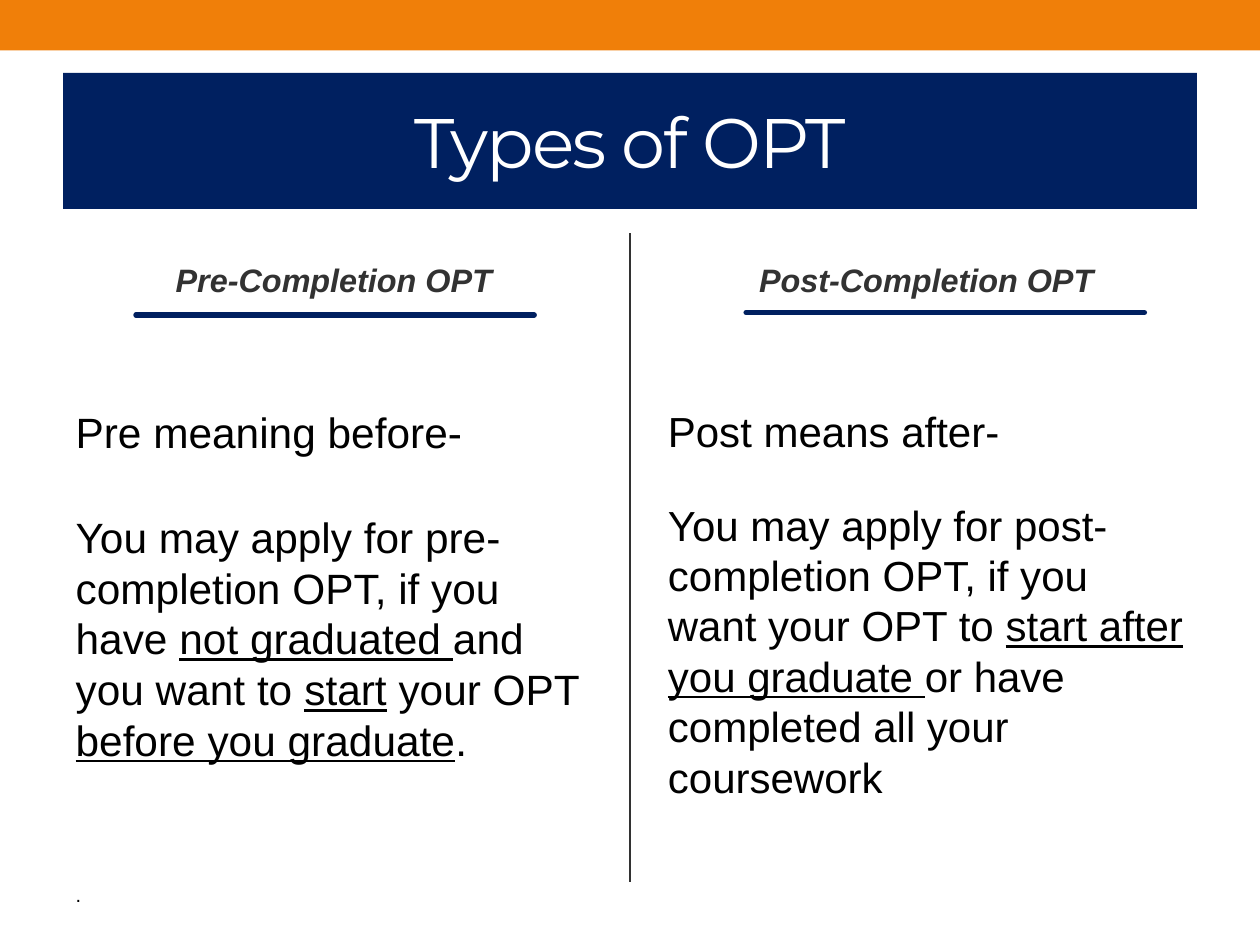
import pptx
import pptx.dml.color
import pptx.enum.shapes
import pptx.enum.text
import pptx.oxml.ns
import pptx.util
from lxml import etree

Cm = pptx.util.Cm
Pt = pptx.util.Pt
ALIGN = pptx.enum.text.PP_ALIGN
ANCHOR = pptx.enum.text.MSO_ANCHOR
qn = pptx.oxml.ns.qn

NAVY, ORANGE, GREY = "002060", "F07F09", "323232"
WHITE, BLACK = "FFFFFF", "000000"


def rgb(value):
    return pptx.dml.color.RGBColor.from_string(value)


def add_run(p, text, font="Arial", size=24, color=BLACK, bold=False,
            italic=False, underline=False, spacing=None):
    r = p.add_run()
    r.text = text
    f = r.font
    f.name, f.size, f.color.rgb = font, Pt(size), rgb(color)
    f.bold, f.italic, f.underline = bold, italic, underline
    if spacing is not None:
        r._r.get_or_add_rPr().set("spc", str(int(spacing * 100)))


class Deck:
    def __init__(self, prs, layout):
        self.prs = prs
        self.s = prs.slides.add_slide(prs.slide_layouts[layout])

    def place(self, idx, x, y, w, h, anchor):
        sp = self.s.placeholders[idx]
        sp.left, sp.top, sp.width, sp.height = Cm(x), Cm(y), Cm(w), Cm(h)
        tf = sp.text_frame
        tf.word_wrap = True
        tf.auto_size = pptx.enum.text.MSO_AUTO_SIZE.NONE
        tf.vertical_anchor = anchor
        return sp

    def bar(self, x, y, w, h, color):
        sp = self.s.shapes.add_shape(
            pptx.enum.shapes.MSO_SHAPE.RECTANGLE, Cm(x), Cm(y), Cm(w), Cm(h))
        sp.shadow.inherit = False
        sp.fill.solid()
        sp.fill.fore_color.rgb = rgb(color)
        sp.line.fill.background()

    def line(self, x1, y1, x2, y2, color, width, cap="flat"):
        sp = self.s.shapes.add_connector(
            pptx.enum.shapes.MSO_CONNECTOR.STRAIGHT, Cm(x1), Cm(y1), Cm(x2), Cm(y2))
        sp.line.color.rgb = rgb(color)
        sp.line.width = Pt(width)
        sp.line._get_or_add_ln().set("cap", cap)
        etree.SubElement(sp._element.spPr, qn("a:effectLst"))

    def title(self, text, x, y, w, h):
        sp = self.place(0, x, y, w, h, ANCHOR.MIDDLE)
        sp.fill.solid()
        sp.fill.fore_color.rgb = rgb(NAVY)
        p = sp.text_frame.paragraphs[0]
        p.alignment = ALIGN.CENTER
        add_run(p, text, font="Montserrat", size=40, color=WHITE, spacing=-1)

    def heading(self, idx, text, x, y, w, h):
        p = self.place(idx, x, y, w, h, ANCHOR.MIDDLE).text_frame.paragraphs[0]
        p.alignment = ALIGN.CENTER
        p.space_before = Pt(0)
        add_run(p, text, size=18.5, color=GREY, bold=True, italic=True)

    def body(self, idx, paragraphs, x, y, w, h):
        tf = self.place(idx, x, y, w, h, ANCHOR.TOP).text_frame
        tf.margin_top = Cm(1.4)
        for i, (size, before, parts) in enumerate(paragraphs):
            p = tf.paragraphs[0] if i == 0 else tf.add_paragraph()
            p.space_before = Pt(before)
            pPr = p._p.get_or_add_pPr()
            pPr.set("marL", "0")
            pPr.set("indent", "0")
            etree.SubElement(pPr, qn("a:buNone"))
            for j, text in enumerate(parts):
                add_run(p, text, size=size, underline=j % 2 == 1)


def main():
    prs = pptx.Presentation()
    prs.slide_width, prs.slide_height = Cm(25.4), Cm(19.05)
    deck = Deck(prs, 4)
    deck.bar(0, 0, 25.4, 1.02, ORANGE)
    deck.line(12.7, 4.7, 12.7, 17.78, GREY, 1.5)
    deck.title("Types of OPT", 1.27, 1.47, 22.86, 2.74)

    columns = [
        (1.27, 2.74, 6.35, "Pre‐Completion OPT", [
            (24.2, 0, ["Pre meaning before-"]),
            (24.2, 31, ["You may apply for pre‐completion OPT, if you have ",
                        "not graduated ", "and you want to ", "start",
                        " your OPT ", "before you graduate", "."]),
            (11.4, 67, ["."])]),
        (13.21, 15.04, 6.3, "Post‐Completion OPT", [
            (24, 0, ["Post means after-"]),
            (24, 24.5, ["You may apply for post‐completion OPT, if you want your OPT to ",
                        "start after you graduate ",
                        "or have completed all your coursework"])]),
    ]
    for i, (x, rule_x, rule_y, heading, paragraphs) in enumerate(columns):
        deck.heading(1 + 2 * i, heading, x, 4.75, 10.92, 1.78)
        deck.body(2 + 2 * i, paragraphs, x, 6.78, 10.92, 10.97)
        deck.line(rule_x, rule_y, rule_x + 8.03, rule_y, NAVY, 3, cap="rnd")
    prs.save("out.pptx")


if __name__ == "__main__":
    main()
